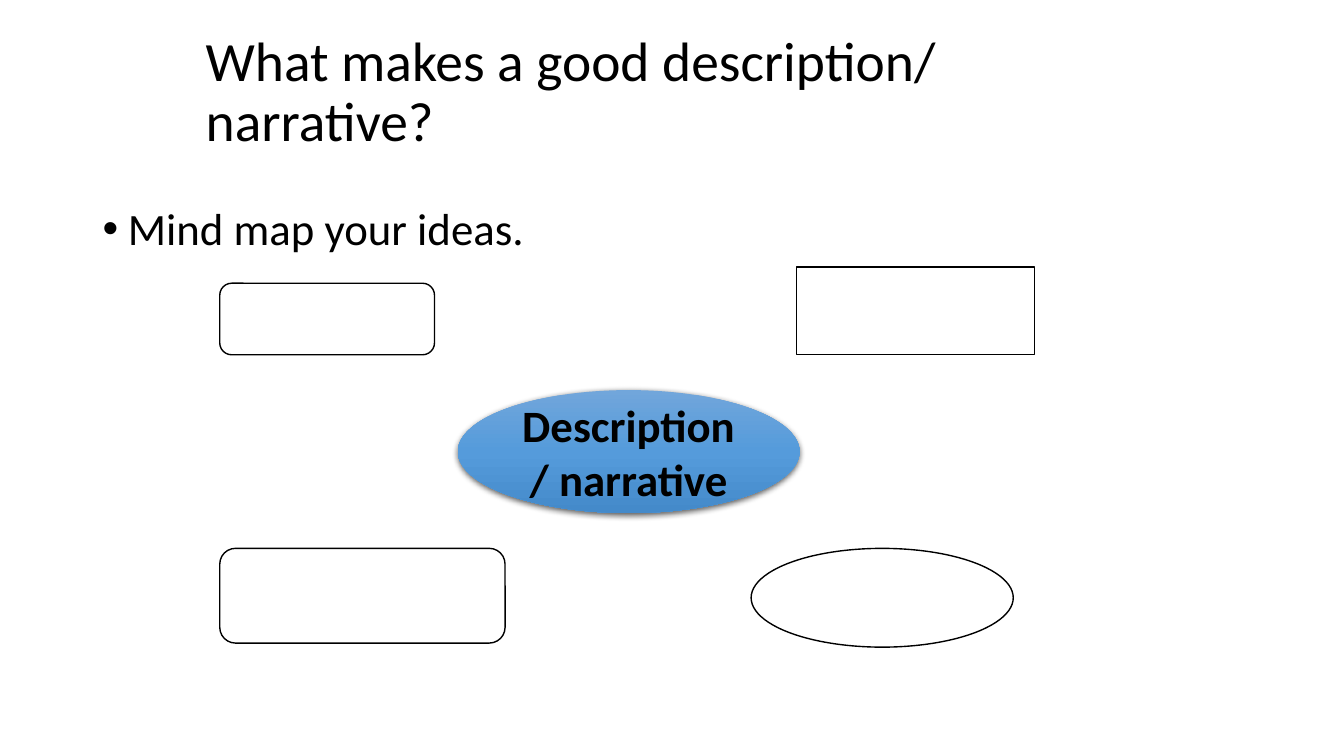
from copy import deepcopy

from lxml import etree
from pptx import Presentation
from pptx.dml.color import RGBColor
from pptx.enum.shapes import MSO_SHAPE
from pptx.enum.text import MSO_ANCHOR, MSO_AUTO_SIZE, PP_ALIGN
from pptx.oxml import parse_xml
from pptx.oxml.ns import nsdecls, qn
from pptx.util import Inches, Pt

BLACK = RGBColor(0x00, 0x00, 0x00)
WHITE = RGBColor(0xFF, 0xFF, 0xFF)
BLUES = [RGBColor(0x71, 0xA6, 0xDB), RGBColor(0x55, 0x9B, 0xDB), RGBColor(0x44, 0x8A, 0xCA)]


def write(sp, words, size, align, anchor, bold=False):
    tf = sp.text_frame
    tf.text = words
    tf.word_wrap = True
    tf.auto_size = MSO_AUTO_SIZE.NONE
    tf.vertical_anchor = anchor
    p = tf.paragraphs[0]
    p.alignment = align
    font = p.runs[0].font
    font.name, font.size, font.bold = "Calibri", Pt(size), bold
    font.color.rgb = BLACK
    return p


def add_node(kind, left, top, width, height):
    sp = s.shapes.add_shape(kind, Inches(left), Inches(top), Inches(width), Inches(height))
    sp.shadow.inherit = False
    return sp


prs = Presentation()
prs.slide_width, prs.slide_height = Inches(13.33), Inches(7.5)
s = prs.slides.add_slide(prs.slide_layouts[5])

# Title and bullet
title = s.shapes.title
title.left, title.top, title.width, title.height = map(Inches, (1.94, 0.3, 8.74, 1.25))
p = write(title, "What makes a good description/ narrative?", 39.6, PP_ALIGN.LEFT, MSO_ANCHOR.MIDDLE)
p.line_spacing = 0.9

body = s.shapes.add_textbox(Inches(0.92), Inches(2), Inches(11.5), Inches(4.76))
p = write(body, "Mind map your ideas.", 32, PP_ALIGN.LEFT, MSO_ANCHOR.TOP)
p.line_spacing = 0.9
p.space_before = Pt(10)
pPr = p._p.get_or_add_pPr()
pPr.set("marL", str(Inches(0.25)))
pPr.set("indent", str(-Inches(0.25)))
etree.SubElement(pPr, qn("a:buFont")).set("typeface", "Arial")
etree.SubElement(pPr, qn("a:buChar")).set("char", "•")

# Centre of the mind map
centre = add_node(MSO_SHAPE.OVAL, 4.54, 3.87, 3.39, 1.22)
centre.line.fill.background()
centre.fill.gradient()
centre.fill.gradient_angle = 270
stop_list = centre._element.spPr.find(".//" + qn("a:gsLst"))
stop_list.append(deepcopy(stop_list[-1]))
for i, (stop, blue) in enumerate(zip(centre.fill.gradient_stops, BLUES)):
    stop.position = i / 2
    stop.color.rgb = blue
centre._element.spPr.find(qn("a:effectLst")).append(parse_xml(
    f'<a:outerShdw {nsdecls("a")} blurRad="{Pt(4.5)}" dist="{Pt(1.5)}" dir="5400000" '
    'algn="ctr" rotWithShape="0"><a:srgbClr val="000000"><a:alpha val="63000"/>'
    '</a:srgbClr></a:outerShdw>'))
write(centre, "Description/ narrative", 32, PP_ALIGN.CENTER, MSO_ANCHOR.MIDDLE, bold=True)

# Empty nodes for ideas
for kind, left, top, width, height in [
    (MSO_SHAPE.ROUNDED_RECTANGLE, 2.18, 2.81, 2.13, 0.71),
    (MSO_SHAPE.RECTANGLE, 7.9, 2.65, 2.36, 0.87),
    (MSO_SHAPE.ROUNDED_RECTANGLE, 2.18, 5.44, 2.83, 0.94),
    (MSO_SHAPE.OVAL, 7.45, 5.44, 2.6, 0.98),
]:
    node = add_node(kind, left, top, width, height)
    node.fill.solid()
    node.fill.fore_color.rgb = WHITE
    node.line.color.rgb = BLACK
    node.line.width = Pt(1)

prs.save("out.pptx")
